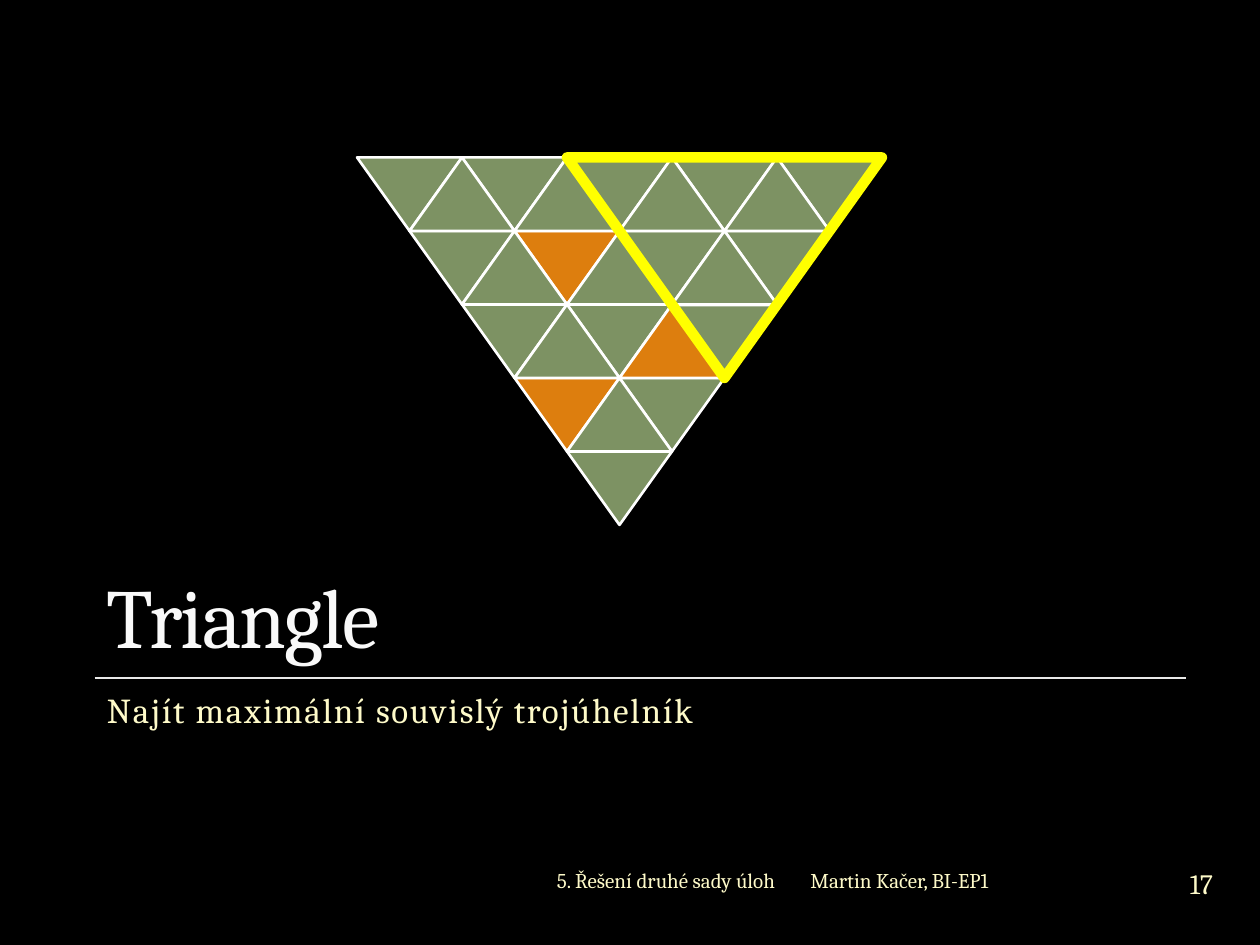
from lxml.etree import SubElement
from pptx import Presentation
from pptx.dml.color import RGBColor
from pptx.enum.shapes import MSO_CONNECTOR, MSO_SHAPE
from pptx.enum.text import MSO_ANCHOR, PP_ALIGN
from pptx.oxml.ns import qn
from pptx.util import Pt

BLACK = RGBColor(0x00, 0x00, 0x00)
WHITE = RGBColor(0xFF, 0xFF, 0xFF)
RULE_GREY = RGBColor(0xE9, 0xE9, 0xE8)
TITLE_WHITE = RGBColor(0xF9, 0xF9, 0xF9)
CREAM = RGBColor(0xFE, 0xFA, 0xC9)
GREEN = RGBColor(0x7D, 0x92, 0x63)
ORANGE = RGBColor(0xDD, 0x7E, 0x0E)
YELLOW = RGBColor(0xFF, 0xFF, 0x00)

ROWS = 5
ORANGE_CELLS = {(1, 1, True), (3, 0, True), (2, 1, False)}
THICK_CELL = (2, 2, True)


def add_text(slide, text, box, *, size, color=CREAM, align=PP_ALIGN.LEFT,
             anchor=MSO_ANCHOR.MIDDLE, spacing=0, before=0, inset=None):
    """Place one line of text in a box of (left, top, width, height) points."""
    frame = slide.shapes.add_textbox(*map(Pt, box)).text_frame
    frame.word_wrap = True
    frame.vertical_anchor = anchor
    if inset is not None:
        frame.margin_left = frame.margin_right = Pt(inset)
        frame.margin_top = frame.margin_bottom = Pt(inset)
    para = frame.paragraphs[0]
    para.alignment = align
    para.space_before = Pt(before)
    span = para.add_run()
    span.text = text
    span.font.name = "Cambria"
    span.font.size = Pt(size)
    span.font.color.rgb = color
    if spacing:
        span.font._element.set("spc", str(spacing * 100))


def add_triangle(slide, box, *, fill=None, line=WHITE, weight=1.5, down=True):
    """Place a triangle that points down or up, with rounded line joins."""
    triangle = slide.shapes.add_shape(MSO_SHAPE.ISOSCELES_TRIANGLE, *map(Pt, box))
    triangle.shadow.inherit = False
    if fill is None:
        triangle.fill.background()
    else:
        triangle.fill.solid()
        triangle.fill.fore_color.rgb = fill
    triangle.line.color.rgb = line
    triangle.line.width = Pt(weight)
    properties = triangle._element.spPr
    SubElement(properties.find(qn("a:ln")), qn("a:round"))
    if down:
        properties.find(qn("a:xfrm")).set("flipV", "1")


def add_triangle_grid(slide, left, top, width, height):
    """Fill a box with a triangular grid and outline its largest clear triangle."""
    cell_width, cell_height = width / ROWS, height / ROWS
    for down in (True, False):
        count = ROWS if down else ROWS - 1
        for row in reversed(range(count)):
            indent = (row if down else row + 1) * cell_width / 2
            for column in range(count - row):
                cell = (row, column, down)
                box = (left + indent + column * cell_width,
                       top + row * cell_height, cell_width, cell_height)
                add_triangle(slide, box, down=down,
                             fill=ORANGE if cell in ORANGE_CELLS else GREEN,
                             weight=2.25 if cell == THICK_CELL else 1.5)
    outline = (left + 2 * cell_width, top, 3 * cell_width, 3 * cell_height)
    add_triangle(slide, outline, line=YELLOW, weight=6)


def add_heading(slide, left, top, width, height):
    """Place the title, the rule under it and the subtitle."""
    title_height, rule_offset, subtitle_offset = 108, 111.5, 114
    rule_top = top + rule_offset
    rule = slide.shapes.add_connector(
        MSO_CONNECTOR.STRAIGHT, Pt(left), Pt(rule_top), Pt(left + width), Pt(rule_top))
    rule.line.color.rgb = RULE_GREY
    rule.line.width = Pt(0.75)
    SubElement(rule._element.spPr, qn("a:effectLst"))
    add_text(slide, "Triangle", (left, top, width, title_height), size=48,
             color=TITLE_WHITE, anchor=MSO_ANCHOR.BOTTOM, spacing=-1)
    add_text(slide, "Najít maximální souvislý trojúhelník",
             (left, top + subtitle_offset, width, height - subtitle_offset),
             size=20, anchor=MSO_ANCHOR.TOP, spacing=1, before=6)


def add_footer(slide, left, top, width, height):
    """Place the lecture name, the author and the page number."""
    add_text(slide, "Martin Kačer, BI-EP1", (left + 288, top, 204, height), size=12)
    add_text(slide, "5. Řešení druhé sady úloh", (left, top, 282, height),
             size=12, align=PP_ALIGN.RIGHT)
    add_text(slide, "17", (left + width - 48, top - 1.5, 48, 36), size=16,
             align=PP_ALIGN.CENTER, inset=0)


def main():
    """Build the slide and save the deck."""
    deck = Presentation()
    deck.slide_width, deck.slide_height = Pt(720), Pt(540)
    page = deck.slides.add_slide(deck.slide_layouts[6])
    page.background.fill.solid()
    page.background.fill.fore_color.rgb = BLACK
    add_heading(page, 54, 276, 624, 192)
    add_footer(page, 168, 488, 542.5, 30)
    add_triangle_grid(page, 204, 90, 300, 210)
    deck.save("out.pptx")


if __name__ == "__main__":
    main()
